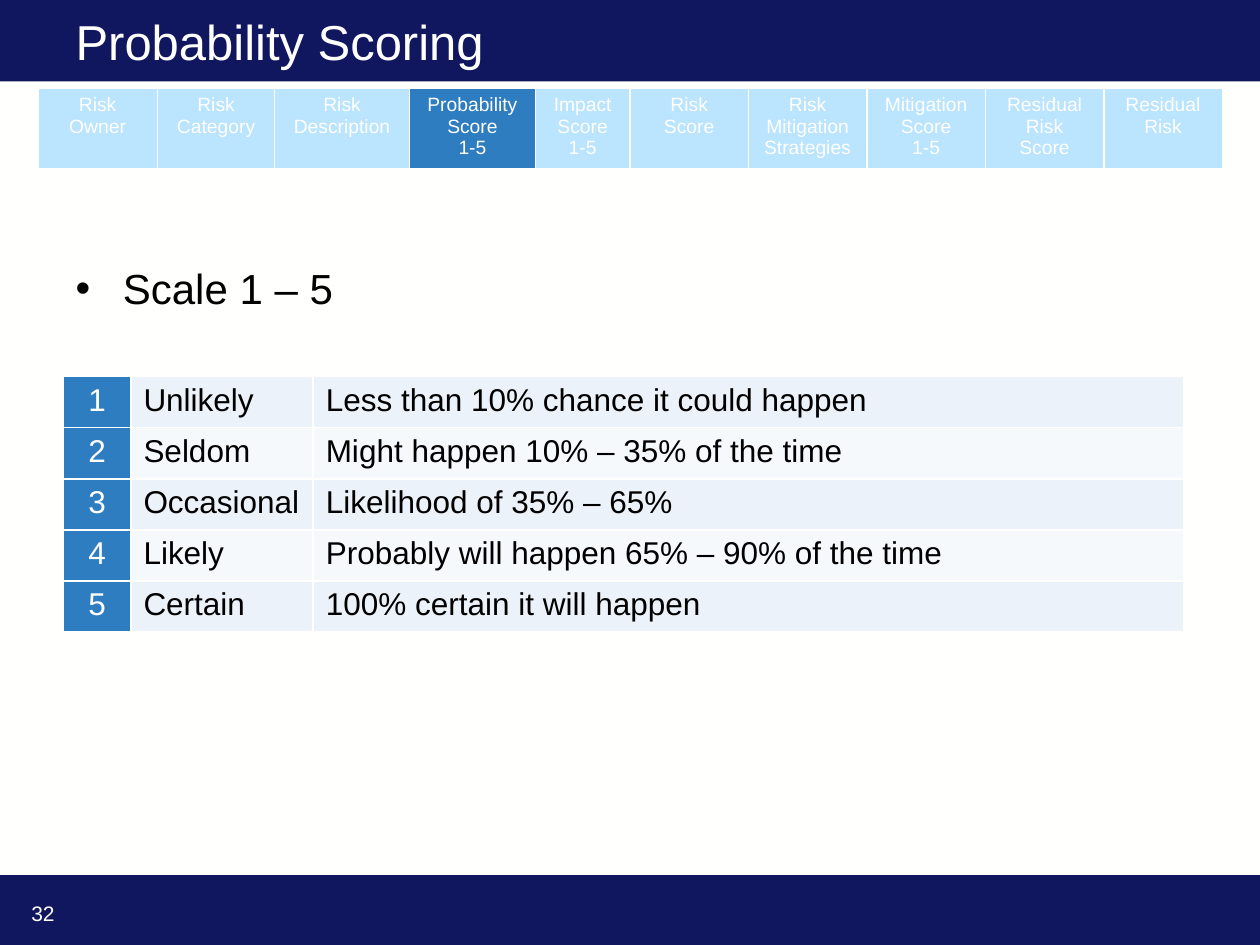
from lxml.etree import SubElement
from pptx import Presentation
from pptx.dml.color import RGBColor
from pptx.enum.shapes import MSO_SHAPE
from pptx.enum.text import MSO_ANCHOR, MSO_AUTO_SIZE, PP_ALIGN
from pptx.oxml.ns import qn
from pptx.util import Pt

WHITE, BLACK, NAVY = "FFFFFE", "000000", "11175E"
BLUE, PALE_BLUE = "2F7DC1", "BBE4FF"
BANDS = ("ECF2F9", "F6F9FC")

STEPS = [
    ("Risk Owner", 68.4), ("Risk Category", 67), ("Risk Description", 77),
    ("Probability Score\v1-5", 72), ("Impact Score\v1-5", 54), ("Risk Score", 67.7),
    ("Risk Mitigation Strategies", 67.7), ("Mitigation Score\v1-5", 67.7),
    ("Residual Risk Score", 67.7), ("Residual Risk", 67.7),
]
CURRENT_STEP = 3

SCALE = [
    ("Unlikely", "Less than 10% chance it could happen"),
    ("Seldom", "Might happen 10% – 35% of the time"),
    ("Occasional", "Likelihood of 35% – 65%"),
    ("Likely", "Probably will happen 65% – 90% of the time"),
    ("Certain", "100% certain it will happen"),
]


def color(hex_text):
    return RGBColor.from_string(hex_text)


def place(shape, left, top, width, height):
    shape.left, shape.top = Pt(left), Pt(top)
    shape.width, shape.height = Pt(width), Pt(height)


def style(paragraph, size, hex_text, align=PP_ALIGN.LEFT):
    paragraph.alignment = align
    paragraph.font.name = "Arial"
    paragraph.font.size = Pt(size)
    paragraph.font.color.rgb = color(hex_text)


def add_band(slide, left, top, width, height):
    band = slide.shapes.add_shape(
        MSO_SHAPE.RECTANGLE, Pt(left), Pt(top), Pt(width), Pt(height))
    band.shadow.inherit = False
    band.fill.solid()
    band.fill.fore_color.rgb = color(NAVY)
    band.line.fill.background()


def add_title(slide, left, top, width, height):
    title = slide.shapes.title
    place(title, left, top, width, height)
    frame = title.text_frame
    frame.text = "Probability Scoring"
    frame.auto_size = MSO_AUTO_SIZE.NONE
    frame.vertical_anchor = MSO_ANCHOR.MIDDLE
    style(frame.paragraphs[0], 28, WHITE)


def add_page_number(slide, left, top, width, height):
    number = slide.shapes.add_textbox(Pt(left), Pt(top), Pt(width), Pt(height))
    number.text_frame.word_wrap = True
    number.text_frame.text = "32"
    style(number.text_frame.paragraphs[0], 12, WHITE)


def add_body(slide, left, top, width, height):
    body = slide.placeholders[1]
    place(body, left, top, width, height)
    frame = body.text_frame
    frame.text = "Scale 1 – 5"
    frame.auto_size = MSO_AUTO_SIZE.NONE
    frame.margin_top = Pt(40)
    paragraph = frame.paragraphs[0]
    paragraph.space_before = Pt(0)
    properties = paragraph._p.get_or_add_pPr()
    properties.set("marL", str(Pt(27)))
    properties.set("indent", str(Pt(-27)))
    SubElement(properties, qn("a:buChar"), char="•")
    style(paragraph, 24, BLACK)


def add_grid(slide, left, top, widths, rows, row_height):
    shape = slide.shapes.add_table(
        rows, len(widths), Pt(left), Pt(top), Pt(sum(widths)), Pt(rows * row_height))
    table = shape.table
    table.first_row = table.horz_banding = False
    for column, width in zip(table.columns, widths):
        column.width = Pt(width)
    for row in table.rows:
        row.height = Pt(row_height)
    return table


def fill_cell(cell, text, size, text_color, fill, align=PP_ALIGN.LEFT, bottom_border=1):
    cell.text = text
    style(cell.text_frame.paragraphs[0], size, text_color, align)
    properties = cell._tc.get_or_add_tcPr()
    for side in "LRTB":
        weight = bottom_border if side == "B" else 1
        border = SubElement(properties, qn(f"a:ln{side}"), w=str(Pt(weight)))
        SubElement(SubElement(border, qn("a:solidFill")), qn("a:srgbClr"), val=WHITE)
    cell.fill.solid()
    cell.fill.fore_color.rgb = color(fill)


def add_step_strip(slide, left, top, height):
    strip = add_grid(slide, left, top, [width for _, width in STEPS], 1, height)
    for index, (label, _) in enumerate(STEPS):
        fill = BLUE if index == CURRENT_STEP else PALE_BLUE
        fill_cell(strip.cell(0, index), label, 11, WHITE, fill, PP_ALIGN.CENTER, 3)


def add_scale_table(slide, left, top, row_height):
    table = add_grid(slide, left, top, (38.5, 104.2, 497.5), len(SCALE), row_height)
    for row, texts in enumerate(SCALE):
        fill_cell(table.cell(row, 0), str(row + 1), 18, WHITE, BLUE, PP_ALIGN.CENTER)
        for column, text in enumerate(texts, 1):
            fill_cell(table.cell(row, column), text, 18, BLACK, BANDS[row % 2])


def main():
    presentation = Presentation()
    presentation.slide_width, presentation.slide_height = Pt(720), Pt(540)
    layout = presentation.slide_layouts[1]
    slide = presentation.slides.add_slide(layout)
    slide.background.fill.solid()
    slide.background.fill.fore_color.rgb = color(WHITE)

    add_band(slide, 0, 500, 720, 40)
    add_band(slide, 0, 0, 720, 46.5)
    # Bring the placeholders in front of the bands
    for placeholder in list(slide.placeholders):
        slide.shapes._spTree.append(placeholder._element)
    add_title(slide, 36, 9, 648, 28.8)
    add_page_number(slide, 10.8, 511.2, 193.7, 28.8)
    add_body(slide, 36, 110.2, 648, 355.7)
    add_step_strip(slide, 21.6, 50.4, 45)
    add_scale_table(slide, 36.3, 215.2, 29.2)
    presentation.save("out.pptx")


if __name__ == "__main__":
    main()
